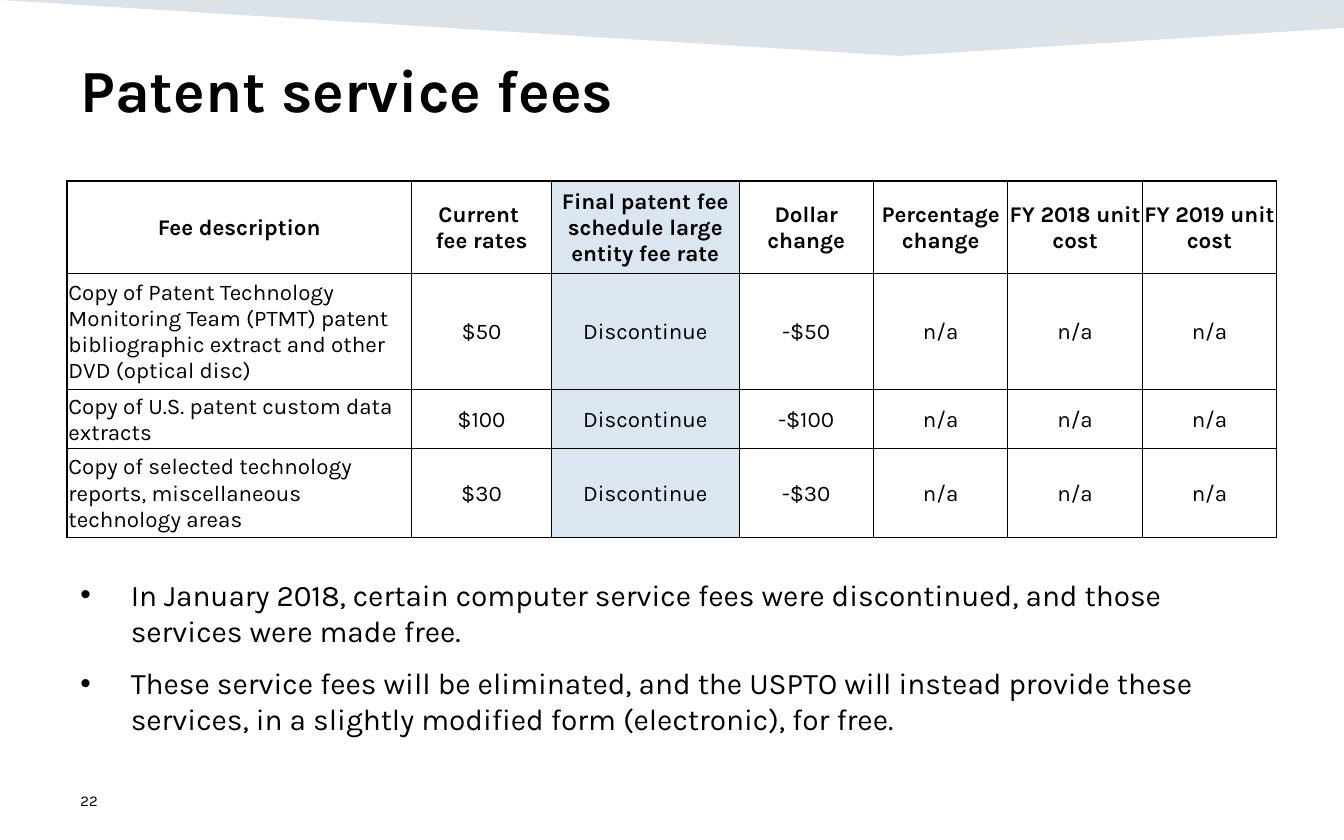
from lxml import etree
from pptx import Presentation
from pptx import util as u
from pptx.dml.color import RGBColor
from pptx.enum import text
from pptx.oxml import ns

Pt = u.Pt
BLACK = RGBColor(0x00, 0x00, 0x00)
WHITE = RGBColor(0xFF, 0xFF, 0xFF)
NAVY = RGBColor(0x16, 0x44, 0x69)
PALE_BLUE = RGBColor(0xDC, 0xE6, 0xF1)
LEFT, CENTER = text.PP_ALIGN.LEFT, text.PP_ALIGN.CENTER
TOP, MIDDLE = text.MSO_ANCHOR.TOP, text.MSO_ANCHOR.MIDDLE


def write(frame, lines, size, bold=False, align=LEFT, anchor=TOP, before=0, bullet=None):
    frame.word_wrap = True
    frame.vertical_anchor = anchor
    for i, line in enumerate(lines):
        paragraph = frame.paragraphs[0] if i == 0 else frame.add_paragraph()
        paragraph.alignment = align
        paragraph.space_before = Pt(before)
        run = paragraph.add_run()
        run.text = line
        run.font.name = "Karla"
        run.font.size = Pt(size)
        run.font.bold = bold
        run.font.color.rgb = BLACK
        if bullet:
            props = paragraph._p.get_or_add_pPr()
            props.set("marL", str(Pt(27)))
            props.set("indent", str(Pt(-27)))
            etree.SubElement(props, ns.qn("a:buFont")).set("typeface", "Arial")
            etree.SubElement(props, ns.qn("a:buChar")).set("char", bullet)


def draw_border(cell, index, side, width):
    line = etree.Element(ns.qn("a:ln" + side), w=str(Pt(width)))
    fill = etree.SubElement(line, ns.qn("a:solidFill"))
    etree.SubElement(fill, ns.qn("a:srgbClr"), val=str(BLACK))
    cell._tc.get_or_add_tcPr().insert(index, line)


deck = Presentation()
deck.slide_width, deck.slide_height = Pt(720), Pt(450)
slide = deck.slides.add_slide(deck.slide_layouts[6])

outline = slide.shapes.build_freeform(0, 0, scale=Pt(1))
outline.add_line_segments([(720, 0), (720, 15), (482, 29.5)], close=True)
banner = outline.convert_to_shape()
banner.shadow.inherit = False
banner.line.fill.background()
banner.fill.solid()
banner.fill.fore_color.rgb = NAVY
tint = banner._element.spPr.find(".//" + ns.qn("a:srgbClr"))
etree.SubElement(tint, ns.qn("a:alpha")).set("val", "15000")

heading = slide.shapes.add_textbox(Pt(36), Pt(24.5), Pt(648), Pt(75))
write(heading.text_frame, ["Patent service fees"], size=32, bold=True)

notes = slide.shapes.add_textbox(Pt(36), Pt(305.3), Pt(648), Pt(106.5))
write(notes.text_frame, [
    "In January 2018, certain computer service fees were discontinued, and those services were made free.",
    "These service fees will be eliminated, and the USPTO will instead provide these services, "
    "in a slightly modified form (electronic), for free.",
], size=16, before=9, bullet="•")

page_number = slide.shapes.add_textbox(Pt(36), Pt(417), Pt(162), Pt(24))
write(page_number.text_frame, ["22"], size=8, anchor=MIDDLE)

header = ["Fee description", "Current \nfee rates", "Final patent fee schedule large entity fee rate",
          "Dollar change", "Percentage change", "FY 2018 unit cost", "FY 2019 unit cost"]
services = [
    ("Copy of Patent Technology Monitoring Team (PTMT) patent bibliographic extract "
     "and other DVD (optical disc)", "$50"),
    ("Copy of U.S. patent custom data extracts", "$100"),
    ("Copy of selected technology reports, miscellaneous technology areas", "$30"),
]
rows = [header] + [[name, rate, "Discontinue", "-" + rate] + ["n/a"] * 3 for name, rate in services]
column_widths = [184.5, 75, 100.5] + [72] * 4
row_heights = [49.3, 62.6, 31.6, 47.3]

fees = slide.shapes.add_table(len(rows), len(header), Pt(36), Pt(97),
                              Pt(sum(column_widths)), Pt(sum(row_heights))).table
fees.first_row = fees.horz_banding = False
for column, width in zip(fees.columns, column_widths):
    column.width = Pt(width)
for row, height in zip(fees.rows, row_heights):
    row.height = Pt(height)

for r, values in enumerate(rows):
    for c, value in enumerate(values):
        cell = fees.cell(r, c)
        cell.margin_left = cell.margin_right = cell.margin_top = Pt(0.7)
        cell.margin_bottom = 0
        cell.vertical_anchor = MIDDLE
        write(cell.text_frame, value.split("\n"), size=12, bold=r == 0,
              align=LEFT if r and c == 0 else CENTER, anchor=MIDDLE)
        cell.fill.solid()
        cell.fill.fore_color.rgb = PALE_BLUE if c == 2 else WHITE
        widths = {"L": 1 if c == 0 else 0.5, "R": 0.5, "T": 1 if r == 0 else 0.5, "B": 0.5}
        for index, (side, width) in enumerate(widths.items()):
            draw_border(cell, index, side, width)

deck.save("out.pptx")
